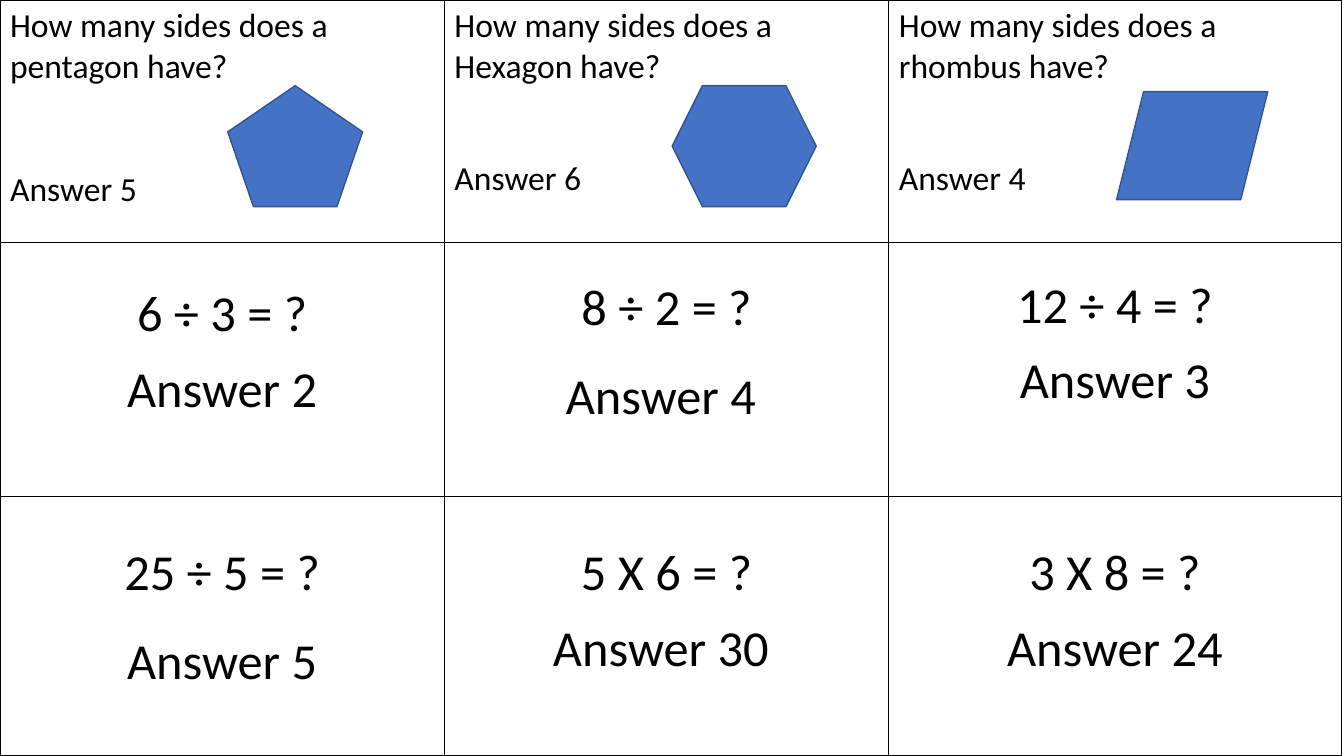
"""Build a three by three grid of maths quiz cards."""
from dataclasses import dataclass

from lxml.etree import SubElement
from pptx import Presentation
from pptx.dml.color import RGBColor
from pptx.enum.shapes import MSO_SHAPE as Geo
from pptx.enum.text import PP_ALIGN as Align
from pptx.oxml.ns import qn
from pptx.slide import Slide
from pptx.table import _Cell as Cell
from pptx.util import Cm, Pt

FONT = "Calibri"
BLACK = "000000"
BLUE = "4472C4"
NAVY = "325491"
COLS = [11.2, 11.2, 11.4]
ROWS = [6.12, 6.4, 6.53]


@dataclass
class Card:
    ask: str
    reply: str
    top: float
    gap: float
    size: int = 36
    align: Align = Align.CENTER


@dataclass
class Figure:
    kind: Geo
    left: float
    top: float
    width: float
    height: float


def shape_card(name: str, reply: str, gap: float) -> Card:
    return Card(f"How many sides does a {name} have?", reply, 0.13, gap, 24, Align.LEFT)


CARDS = [
    [
        shape_card("pentagon", "Answer 5", 58.6),
        shape_card("Hexagon", "Answer 6", 51.3),
        shape_card("rhombus", "Answer 4", 51.3),
    ],
    [
        Card("6 ÷ 3 = ?", "Answer 2", 1.03, 9.8),
        Card("8 ÷ 2 = ?", "Answer 4 ", 0.86, 19.5),
        Card("12 ÷ 4 = ?", "Answer 3", 0.82, 9.8),
    ],
    [
        Card("25 ÷ 5 = ?", "Answer 5", 1.16, 19.5),
        Card("5 X 6 = ?", "Answer 30 ", 1.16, 9.8),
        Card("3 X 8 = ?", "Answer 24", 1.16, 9.8),
    ],
]

FIGURES = [
    Figure(Geo.REGULAR_PENTAGON, 5.74, 2.16, 3.4, 3.05),
    Figure(Geo.HEXAGON, 16.94, 2.16, 3.63, 3.05),
    Figure(Geo.PARALLELOGRAM, 28.14, 2.31, 3.81, 2.72),
]


def color(code: str) -> RGBColor:
    return RGBColor.from_string(code)


def add_edges(cell: Cell) -> None:
    props = cell._tc.get_or_add_tcPr()
    for side in ("a:lnL", "a:lnR", "a:lnT", "a:lnB"):
        edge = SubElement(props, qn(side), w=str(Pt(1)))
        fill = SubElement(edge, qn("a:solidFill"))
        SubElement(fill, qn("a:srgbClr"), val=BLACK)


def fill_cell(cell: Cell, card: Card) -> None:
    add_edges(cell)
    cell.fill.background()
    cell.margin_top = Cm(card.top)
    frame = cell.text_frame
    frame.text = f"{card.ask}\n{card.reply}"
    for para in frame.paragraphs:
        para.alignment = card.align
        for run in para.runs:
            run.font.name = FONT
            run.font.size = Pt(card.size)
            run.font.color.rgb = color(BLACK)
    frame.paragraphs[1].space_before = Pt(card.gap)


def add_grid(slide: Slide) -> None:
    frame = slide.shapes.add_table(
        len(ROWS), len(COLS), Cm(0), Cm(0), Cm(sum(COLS)), Cm(sum(ROWS))
    )
    table = frame.table
    table.first_row = False
    table.horz_banding = False
    for col, width in zip(table.columns, COLS):
        col.width = Cm(width)
    for row, height, cards in zip(table.rows, ROWS, CARDS):
        row.height = Cm(height)
        for cell, card in zip(row.cells, cards):
            fill_cell(cell, card)


def add_figure(slide: Slide, fig: Figure) -> None:
    shape = slide.shapes.add_shape(
        fig.kind, Cm(fig.left), Cm(fig.top), Cm(fig.width), Cm(fig.height)
    )
    shape.shadow.inherit = False
    shape.fill.solid()
    shape.fill.fore_color.rgb = color(BLUE)
    shape.line.color.rgb = color(NAVY)
    shape.line.width = Pt(1)


def main() -> None:
    deck = Presentation()
    deck.slide_width = Cm(33.87)
    deck.slide_height = Cm(19.05)
    slide = deck.slides.add_slide(deck.slide_layouts[6])
    add_grid(slide)
    for fig in FIGURES:
        add_figure(slide, fig)
    deck.save("out.pptx")


if __name__ == "__main__":
    main()
